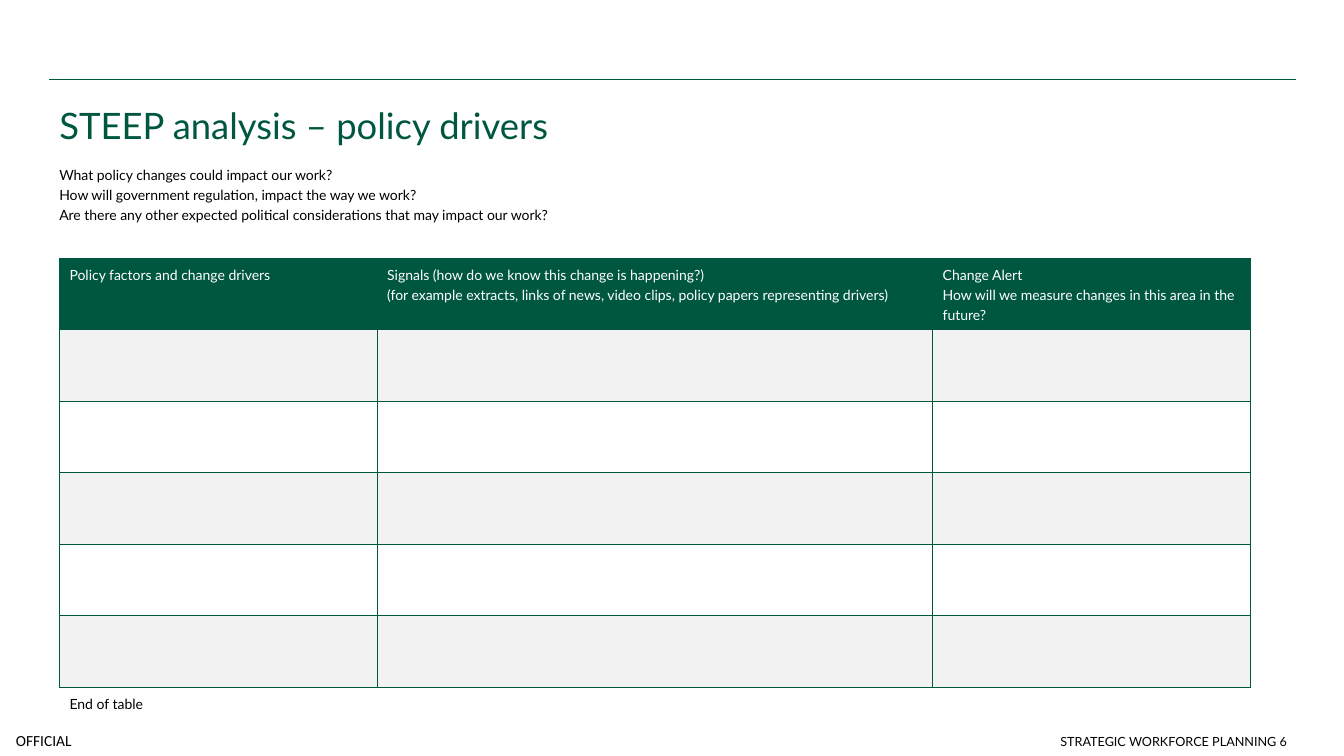
from dataclasses import dataclass

import lxml.etree
import pptx
import pptx.dml.color
import pptx.enum.shapes
import pptx.enum.text
import pptx.oxml.ns
import pptx.util

ALIGN = pptx.enum.text.PP_ALIGN
ANCHOR = pptx.enum.text.MSO_ANCHOR
PX = 9144  # EMU; 100 px to the inch


@dataclass(frozen=True)
class Theme:
    green: str = "00573F"
    grey: str = "F2F2F2"
    white: str = "FFFFFF"
    black: str = "000000"
    font: str = "Lato"
    label_font: str = "Calibri"
    title: int = 26
    body: int = 10
    label: int = 11
    footer: int = 9
    rule: float = 1
    border: float = 0.5


THEME = Theme()


@dataclass(frozen=True)
class Style:
    size: int
    color: str = THEME.black
    font: str = THEME.font
    spacing: float = 1.2
    align: ALIGN = ALIGN.LEFT


@dataclass(frozen=True)
class Box:
    left: int
    top: int
    width: int
    height: int
    lines: tuple[str, ...]
    style: Style
    anchor: ANCHOR = ANCHOR.TOP
    inset: bool = True


BOXES = (
    Box(0, 719, 87, 31, ("OFFICIAL",),
        Style(THEME.label, font=THEME.label_font, spacing=1, align=ALIGN.CENTER),
        ANCHOR.MIDDLE, inset=False),
    Box(49, 89, 1236, 102, ("STEEP analysis – policy drivers",),
        Style(THEME.title, THEME.green)),
    Box(49, 157, 1236, 98,
        ("What policy changes could impact our work?",
         "How will government regulation, impact the way we work?",
         "Are there any other expected political considerations that may impact our work?"),
        Style(THEME.body)),
    Box(684, 709, 602, 39, ("STRATEGIC WORKFORCE PLANNING 6",),
        Style(THEME.footer, spacing=1, align=ALIGN.RIGHT), ANCHOR.BOTTOM),
)

HEADS = (
    ("Policy factors and change drivers",),
    ("Signals (how do we know this change is happening?)",
     "(for example extracts, links of news, video clips, policy papers representing drivers)"),
    ("Change Alert", "How will we measure changes in this area in the future?"),
)
WIDTHS = (315, 551, 315)
HEIGHTS = (71,) * 6 + (39,)
LAST = len(HEIGHTS) - 1


def px(count: int) -> int:
    return pptx.util.Emu(count * PX)


def rgb(code: str) -> pptx.dml.color.RGBColor:
    return pptx.dml.color.RGBColor.from_string(code)


def write(frame, lines: tuple[str, ...], style: Style) -> None:
    frame.text = "\n".join(lines)
    for par in frame.paragraphs:
        par.alignment = style.align
        par.line_spacing = style.spacing
        par.font.name = style.font
        par.font.size = pptx.util.Pt(style.size)
        par.font.color.rgb = rgb(style.color)


def draw_box(slide, box: Box) -> None:
    shape = slide.shapes.add_textbox(
        px(box.left), px(box.top), px(box.width), px(box.height))
    frame = shape.text_frame
    frame.word_wrap = True
    frame.vertical_anchor = box.anchor
    if not box.inset:
        frame.margin_left = frame.margin_right = 0
        frame.margin_top = frame.margin_bottom = 0
    write(frame, box.lines, box.style)


def edge(cell, sides: str) -> None:
    """Line the given sides of a cell and clear the others."""
    props = cell._tc.get_or_add_tcPr()
    name = pptx.oxml.ns.qn
    for place, side in enumerate("LRTB"):
        line = lxml.etree.Element(name(f"a:ln{side}"))
        if side in sides:
            line.set("w", str(int(pptx.util.Pt(THEME.border))))
            fill = lxml.etree.SubElement(line, name("a:solidFill"))
            lxml.etree.SubElement(fill, name("a:srgbClr"), val=THEME.green)
        else:
            lxml.etree.SubElement(line, name("a:noFill"))
        props.insert(place, line)


def draw_table(slide) -> None:
    table = slide.shapes.add_table(
        len(HEIGHTS), len(WIDTHS), px(59), px(256),
        px(sum(WIDTHS)), px(sum(HEIGHTS))).table
    table.first_row = table.horz_banding = False
    for col, width in zip(table.columns, WIDTHS):
        col.width = px(width)
    for num, (row, height) in enumerate(zip(table.rows, HEIGHTS)):
        row.height = px(height)
        band = THEME.grey if num % 2 else THEME.white
        tint = THEME.white if num else THEME.green
        for pos, cell in enumerate(row.cells):
            lines = HEADS[pos] if num == 0 else ("",)
            if (num, pos) == (LAST, 0):
                lines = ("End of table",)
            ink = THEME.black if num else THEME.white
            write(cell.text_frame, lines, Style(THEME.body, ink))
            cell.fill.solid()
            cell.fill.fore_color.rgb = rgb(band if num else tint)
            edge(cell, "T" if num == LAST else "LRTB")


def draw_rule(slide) -> None:
    rule = slide.shapes.add_connector(
        pptx.enum.shapes.MSO_CONNECTOR.STRAIGHT, px(49), px(79), px(1285), px(79))
    rule.line.color.rgb = rgb(THEME.green)
    rule.line.width = pptx.util.Pt(THEME.rule)
    lxml.etree.SubElement(rule._element.spPr, pptx.oxml.ns.qn("a:effectLst"))


def main() -> None:
    deck = pptx.Presentation()
    deck.slide_width, deck.slide_height = px(1333), px(750)
    slide = deck.slides.add_slide(deck.slide_layouts[6])
    draw_rule(slide)
    for box in BOXES:
        draw_box(slide, box)
    draw_table(slide)
    deck.save("out.pptx")


if __name__ == "__main__":
    main()
